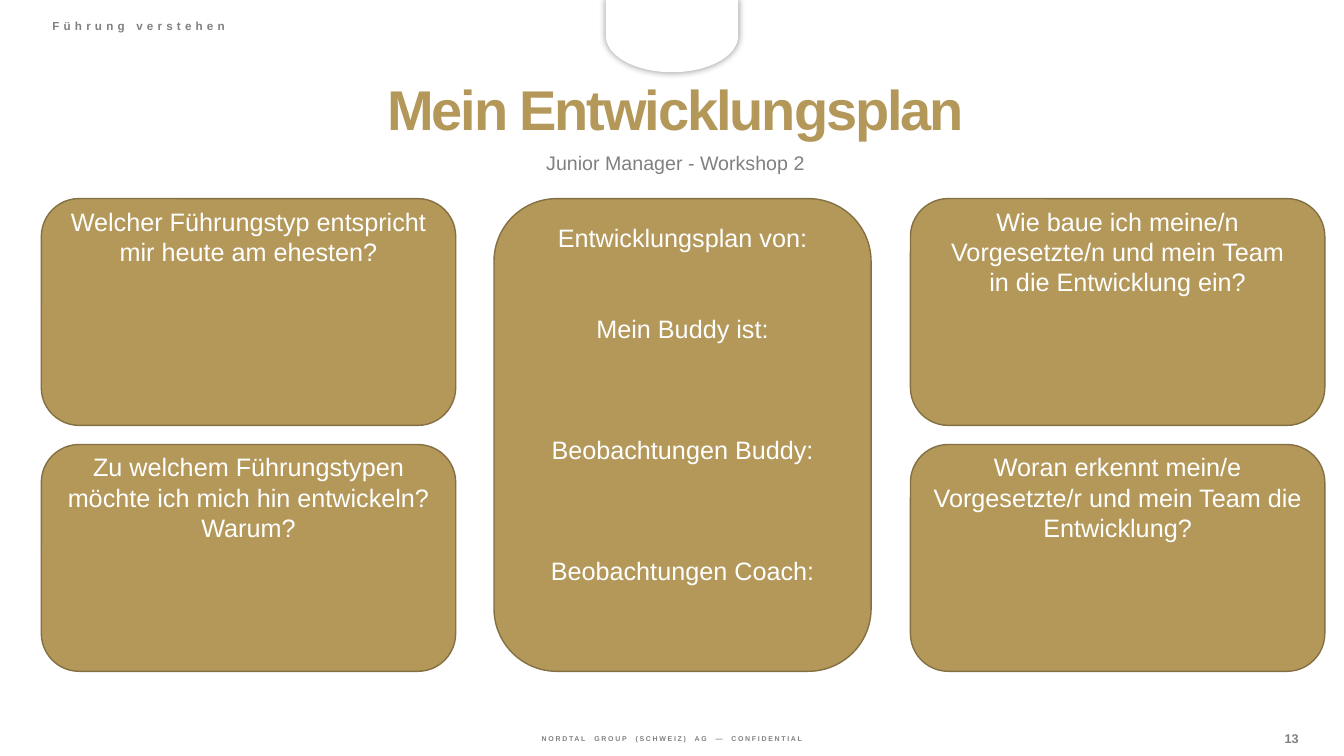
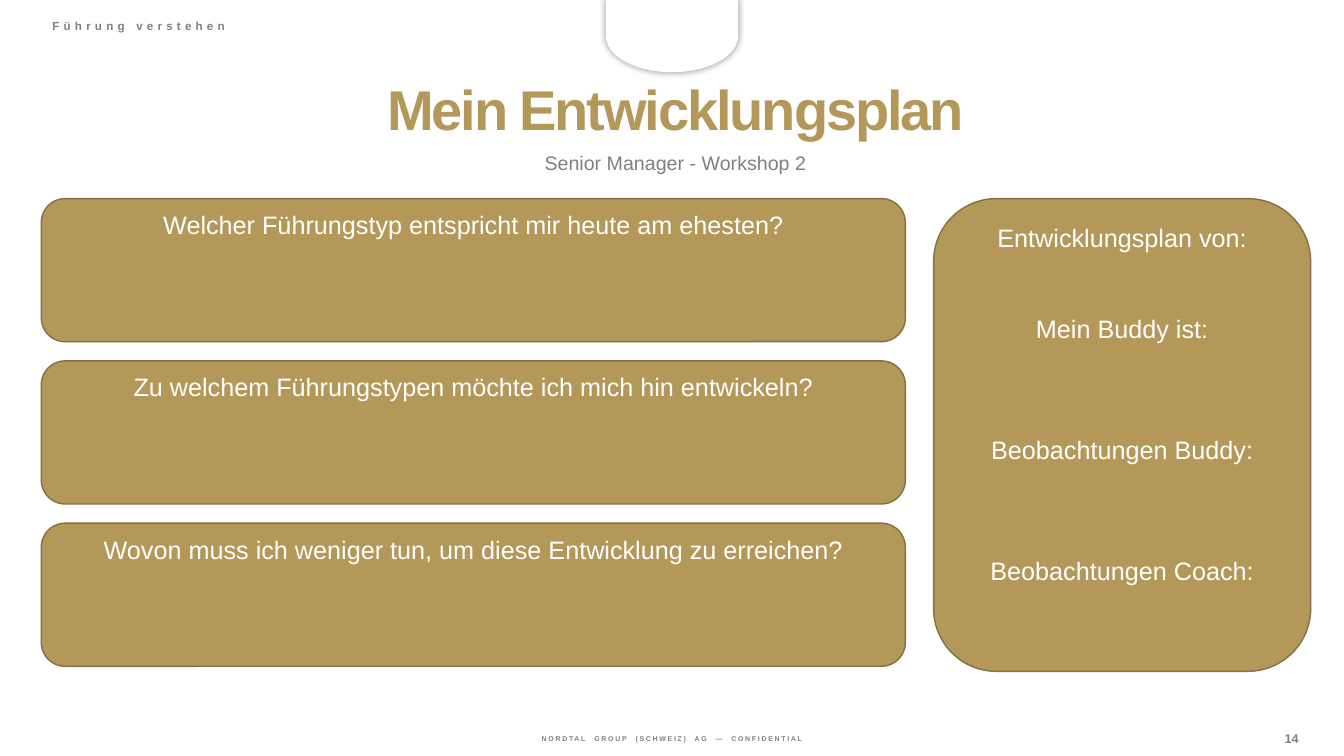
from itertools import groupby

from lxml import etree
from pptx import Presentation
from pptx.dml.color import RGBColor
from pptx.enum.shapes import MSO_SHAPE
from pptx.enum.text import MSO_ANCHOR, MSO_AUTO_SIZE, PP_ALIGN
from pptx.oxml.ns import qn
from pptx.util import Inches, Pt

ROUND, DELAY = MSO_SHAPE.ROUNDED_RECTANGLE, MSO_SHAPE.FLOWCHART_DELAY
TOP, MIDDLE = MSO_ANCHOR.TOP, MSO_ANCHOR.MIDDLE
LEFT, CENTER = PP_ALIGN.LEFT, PP_ALIGN.CENTER
NO_FIT = MSO_AUTO_SIZE.NONE

COLORS = {"gold": "B3985A", "edge": "847043", "grey": "808080",
          "white": "FFFFFF", "black": "000000"}
# spc is the letter spacing, gap the wider spacing of the blanks between words
STYLES = {
    "title": dict(size=40, bold=True, color="gold", spc=-1.5, line_spacing=0.9, alignment=CENTER),
    "subtitle": dict(size=14, bold=False, color="grey", line_spacing=0.8, alignment=CENTER),
    "section": dict(size=8.3, bold=True, color="grey", spc=3, line_spacing=0.8, alignment=LEFT),
    "footer": dict(size=5, bold=True, color="grey", spc=1.2, gap=3.6, line_spacing=1,
                   alignment=CENTER),
    "number": dict(size=9, bold=True, color="grey", line_spacing=1, alignment=CENTER),
    "card": dict(size=18, bold=False, color="white", line_spacing=1, alignment=CENTER),
}

SLIDE_W, SLIDE_H = 13.33, 7.5
GRID_X, GRID_Y, GRID_H = 0.41, 1.97, 4.69
GAP = 0.19                  # between stacked cards
LINE = 0.3                  # height of one line of card text
PANEL_W = 3.74
CORNER = 0.05               # text inset of a rounded corner, as a share of the short side

SECTION = "Führung verstehen"
TITLE = "Mein Entwicklungsplan"
FOOTER = "NORDTAL GROUP (SCHWEIZ) AG — CONFIDENTIAL"
PANEL = [("Entwicklungsplan von:", 0), ("Mein Buddy ist:", 2),
         ("Beobachtungen Buddy:", 3), ("Beobachtungen Coach:", 3)]


def rgb(name):
    return RGBColor.from_string(COLORS[name])


def write(p, text, style):
    fmt = STYLES[style]
    pPr = p._p.get_or_add_pPr()
    for key in ("marL", "indent"):
        pPr.set(key, "0")
    etree.SubElement(pPr, qn("a:buNone"))
    for key in ("alignment", "line_spacing"):
        setattr(p, key, fmt[key])
    p.space_before = Pt(0)
    if "gap" in fmt:
        for _, piece in groupby(text, str.isspace):
            p.add_run().text = "".join(piece)
    else:
        p.text = text
    for r in p.runs:
        for key, value in dict(name="Arial", size=Pt(fmt["size"]), bold=fmt["bold"]).items():
            setattr(r.font, key, value)
        r.font.color.rgb = rgb(fmt["color"])
        spc = fmt.get("gap" if r.text.isspace() else "spc", 0)
        r._r.get_or_add_rPr().set("spc", str(round(spc * 100)))


def setup_frame(tf, **settings):
    for key, value in dict(word_wrap=True, auto_size=NO_FIT, **settings).items():
        setattr(tf, key, value)


def fill_placeholder(ph, box, text, style, anchor=TOP):
    ph.left, ph.top, ph.width, ph.height = map(Inches, box)
    setup_frame(ph.text_frame, vertical_anchor=anchor)
    write(ph.text_frame.paragraphs[0], text, style)


def add_label(s, box, text, style):
    tf = s.shapes.add_textbox(*map(Inches, box)).text_frame
    setup_frame(tf, margin_left=0, margin_right=0, margin_top=Inches(0.01), margin_bottom=0)
    write(tf.paragraphs[0], text, style)


def add_shape(s, kind, box, fill, line):
    sp = s.shapes.add_shape(kind, *map(Inches, box))
    sp.shadow.inherit = False
    sp.fill.solid()
    sp.fill.fore_color.rgb = rgb(fill)
    sp.line.color.rgb = rgb(line)
    sp.line.width = Pt(1)
    return sp


def add_tab(s):
    """White tab with a soft shadow hanging from the top edge."""
    w, h = 0.71, 1.3
    sp = add_shape(s, DELAY, ((SLIDE_W - w) / 2, (w - h) / 2, w, h), "white", "white")
    sp.rotation = 90
    effects = sp._element.spPr.find(qn("a:effectLst"))
    shadow = etree.SubElement(effects, qn("a:outerShdw"), blurRad=str(Pt(5)), dist="0")
    color = etree.SubElement(shadow, qn("a:srgbClr"), val=COLORS["black"])
    etree.SubElement(color, qn("a:alpha"), val="40000")


def add_card(s, box, items, lines):
    """Items are (text, free lines above); the block of lines is centred in the card."""
    w, h = box[2:]
    tf = add_shape(s, ROUND, box, "gold", "edge").text_frame
    top = (h - lines * LINE) / 2 - CORNER * min(w, h)
    setup_frame(tf, vertical_anchor=TOP, margin_top=Inches(top), margin_bottom=0)
    for i, (text, free) in enumerate(items):
        p = tf.add_paragraph() if i else tf.paragraphs[0]
        write(p, text, "card")
        p.space_before = Inches(free * LINE)


def add_stack(s, x, w, h, questions, lines):
    for row, question in enumerate(questions):
        add_card(s, (x, GRID_Y + row * (h + GAP), w, h), [(question, 0)], lines)


def add_panel(s, x):
    add_card(s, (x, GRID_Y, PANEL_W, GRID_H), PANEL, 14)


def new_slide(prs, number, subtitle):
    s = prs.slides.add_slide(prs.slide_layouts[3])
    title, section, sub = s.placeholders
    wide = SLIDE_W - 0.75
    fill_placeholder(title, (GRID_X, 0.76, wide, 0.71), TITLE, "title", MIDDLE)
    fill_placeholder(section, (0.42, 0.16, 4.87, 0.21), SECTION, "section")
    fill_placeholder(sub, (GRID_X, 1.49, wide, 0.31), subtitle, "subtitle")
    add_label(s, (4.13, 7.28, 5.07, 0.1), FOOTER, "footer")
    add_label(s, (12.43, 7.24, 0.76, 0.16), str(number), "number")
    add_tab(s)
    return s


def main():
    prs = Presentation()
    prs.slide_width, prs.slide_height = Inches(SLIDE_W), Inches(SLIDE_H)

    s = new_slide(prs, 13, "Junior Manager - Workshop 2")
    card_w, card_h = 4.11, (GRID_H - GAP) / 2
    add_stack(s, GRID_X, card_w, card_h, [
        "Welcher Führungstyp entspricht mir heute am ehesten?",
        "Zu welchem Führungstypen möchte ich mich hin entwickeln? Warum?"], 7)
    add_stack(s, 9.03, card_w, card_h, [
        "Wie baue ich meine/n Vorgesetzte/n und mein Team\vin die Entwicklung ein?",
        "Woran erkennt mein/e Vorgesetzte/r und mein Team die Entwicklung?"], 7)
    add_panel(s, 4.9)

    s = new_slide(prs, 14, "Senior Manager - Workshop 2")
    add_stack(s, GRID_X, 8.57, 1.42, [
        "Welcher Führungstyp entspricht mir heute am ehesten?",
        "Zu welchem Führungstypen möchte ich mich hin entwickeln?",
        "Wovon muss ich weniger tun, um diese Entwicklung zu erreichen?"], 4)
    add_panel(s, 9.26)

    prs.save("out.pptx")


if __name__ == "__main__":
    main()
